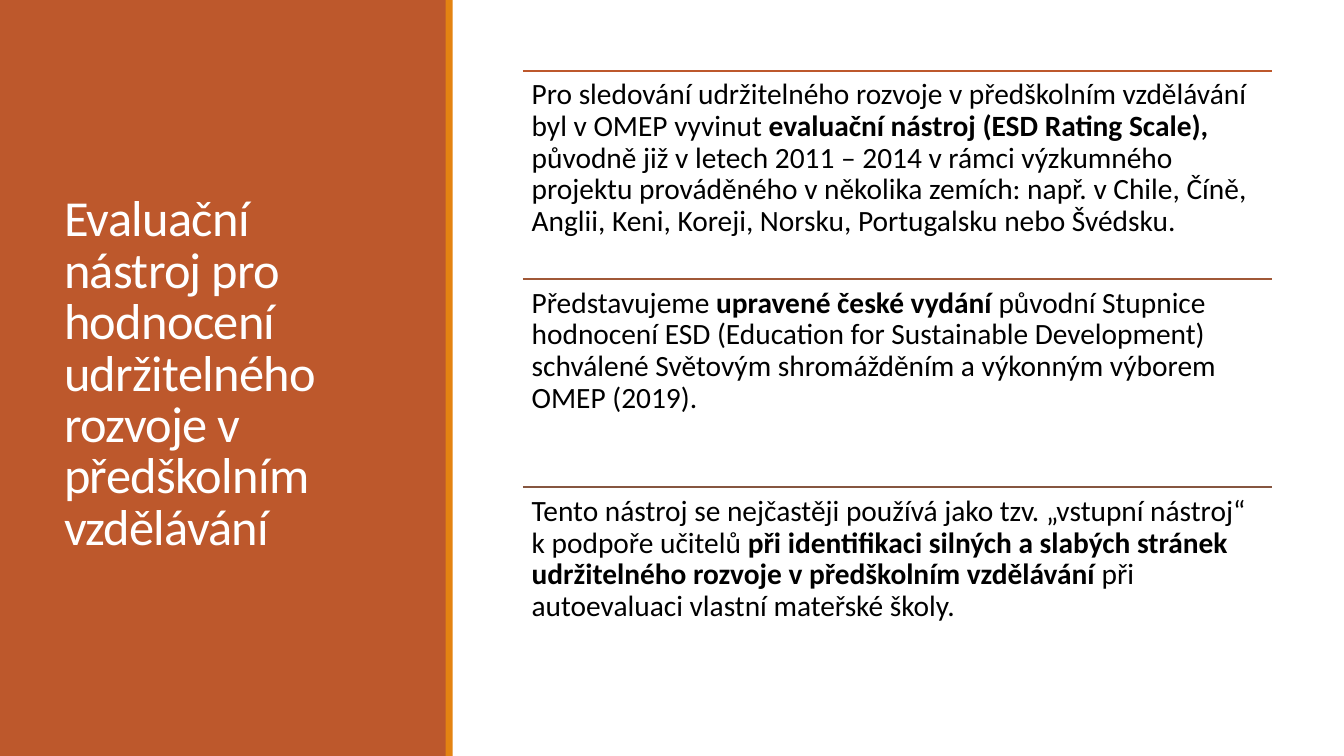
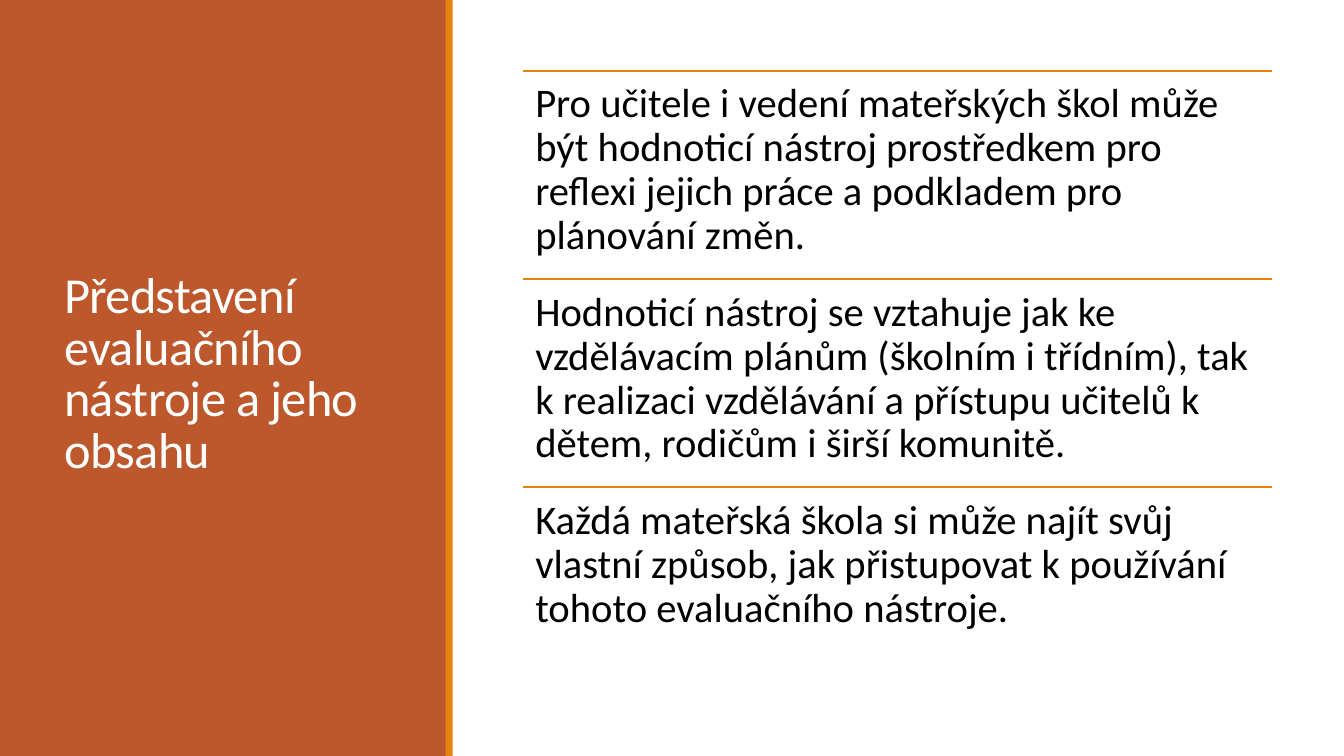
from lxml.etree import SubElement
from pptx import Presentation
from pptx.dml.color import RGBColor
from pptx.enum.shapes import MSO_CONNECTOR, MSO_SHAPE
from pptx.enum.text import MSO_ANCHOR
from pptx.oxml.ns import qn
from pptx.util import Cm, Pt

COLORS = {
    "panel": "BD582C",
    "accent": "E48312",
    "brown": "A05837",
    "dark_brown": "865640",
    "white": "FFFFFF",
    "black": "000000",
}
FONT = "Calibri"
WIDTH, HEIGHT = 33.87, 19.05

# Stack of ruled rows to the right of the panel
ROW_LEFT, ROW_TOP, ROW_WIDTH, ROW_HEIGHT = 13.18, 1.78, 18.87, 5.25

# Each row is a list of spans: (text, bold)
TOOL_ROWS = [
    [
        ("Pro sledování udržitelného rozvoje v předškolním vzdělávání byl v OMEP vyvinut ", False),
        ("evaluační nástroj (ESD Rating Scale), ", True),
        ("původně již v letech 2011 – 2014 v rámci výzkumného projektu prováděného "
         "v několika zemích: např. v Chile, Číně, Anglii, Keni, Koreji, Norsku, "
         "Portugalsku nebo Švédsku.", False),
    ],
    [
        ("Představujeme ", False),
        ("upravené české vydání ", True),
        ("původní Stupnice hodnocení ESD (Education for Sustainable Development) "
         "schválené Světovým shromážděním a výkonným výborem OMEP (2019).", False),
    ],
    [
        ("Tento nástroj se nejčastěji používá jako tzv. „vstupní nástroj“ k podpoře učitelů ", False),
        ("při identifikaci silných a slabých stránek udržitelného rozvoje "
         "v předškolním vzdělávání ", True),
        ("při autoevaluaci vlastní mateřské školy.", False),
    ],
]
CONTENT_ROWS = [
    [("Pro učitele i vedení mateřských škol může být hodnoticí nástroj prostředkem "
      "pro reflexi jejich práce a podkladem pro plánování změn.", False)],
    [("Hodnoticí nástroj se vztahuje jak ke vzdělávacím plánům (školním i třídním), "
      "tak k realizaci vzdělávání a přístupu učitelů k dětem, rodičům i širší komunitě.", False)],
    [("Každá mateřská škola si může najít svůj vlastní způsob, jak přistupovat "
      "k používání tohoto evaluačního nástroje.", False)],
]


def rgb(name):
    return RGBColor.from_string(COLORS[name])


def add_band(page, left, width, color):
    """Full-height vertical band."""
    band = page.shapes.add_shape(MSO_SHAPE.RECTANGLE, Cm(left), 0, Cm(width), Cm(HEIGHT))
    band.shadow.inherit = False
    band.fill.solid()
    band.fill.fore_color.rgb = rgb(color)
    band.line.fill.background()


def add_text(page, spans, left, top, width, height, *, size, color="black",
             inset=0.25, line_spacing=0.9, anchor=MSO_ANCHOR.TOP, tracking=None):
    """One paragraph of (text, bold) spans; tracking is in points."""
    box = page.shapes.add_textbox(Cm(left), Cm(top), Cm(width), Cm(height))
    frame = box.text_frame
    frame.word_wrap = True
    frame.vertical_anchor = anchor
    frame.margin_left = frame.margin_right = Cm(inset)
    frame.margin_top = frame.margin_bottom = Cm(inset)
    para = frame.paragraphs[0]
    para.line_spacing = line_spacing
    for text, bold in spans:
        span = para.add_run()
        span.text = text
        span.font.name = FONT
        span.font.size = Pt(size)
        span.font.bold = bold
        span.font.color.rgb = rgb(color)
        if tracking is not None:
            span.font._element.set("spc", str(round(tracking * 100)))


def add_rule(page, left, top, width, color):
    rule = page.shapes.add_connector(
        MSO_CONNECTOR.STRAIGHT, Cm(left), Cm(top), Cm(left + width), Cm(top))
    rule.line.color.rgb = rgb(color)
    rule.line.width = Pt(1.25)
    SubElement(rule._element.spPr, qn("a:effectLst"))


def add_page(deck, title):
    """Page with the coloured title panel."""
    page = deck.slides.add_slide(deck.slide_layouts[6])
    add_band(page, 0, 11.25, "panel")
    add_band(page, 11.23, 0.18, "accent")
    add_text(page, [(title, False)], 1.37, 1.45, 8.56, 16.03, size=36, color="white",
             line_spacing=0.85, anchor=MSO_ANCHOR.MIDDLE, tracking=-0.5)
    return page


def add_rows(page, rows, rule_colors, *, size, inset):
    """Equal rows, each opened by a rule."""
    for index, (spans, color) in enumerate(zip(rows, rule_colors)):
        top = ROW_TOP + index * ROW_HEIGHT
        add_rule(page, ROW_LEFT, top, ROW_WIDTH, color)
        add_text(page, spans, ROW_LEFT, top, ROW_WIDTH, ROW_HEIGHT, size=size, inset=inset)


def main():
    deck = Presentation()
    deck.slide_width, deck.slide_height = Cm(WIDTH), Cm(HEIGHT)

    # Origin of the tool
    page = add_page(deck, "Evaluační nástroj pro hodnocení udržitelného rozvoje "
                          "v předškolním vzdělávání")
    add_rows(page, TOOL_ROWS, ["panel", "brown", "dark_brown"], size=21, inset=0.22)

    # Content of the tool
    page = add_page(deck, "Představení evaluačního nástroje a jeho obsahu")
    add_rows(page, CONTENT_ROWS, ["accent"] * 3, size=29, inset=0.31)

    deck.save("out.pptx")


if __name__ == "__main__":
    main()
